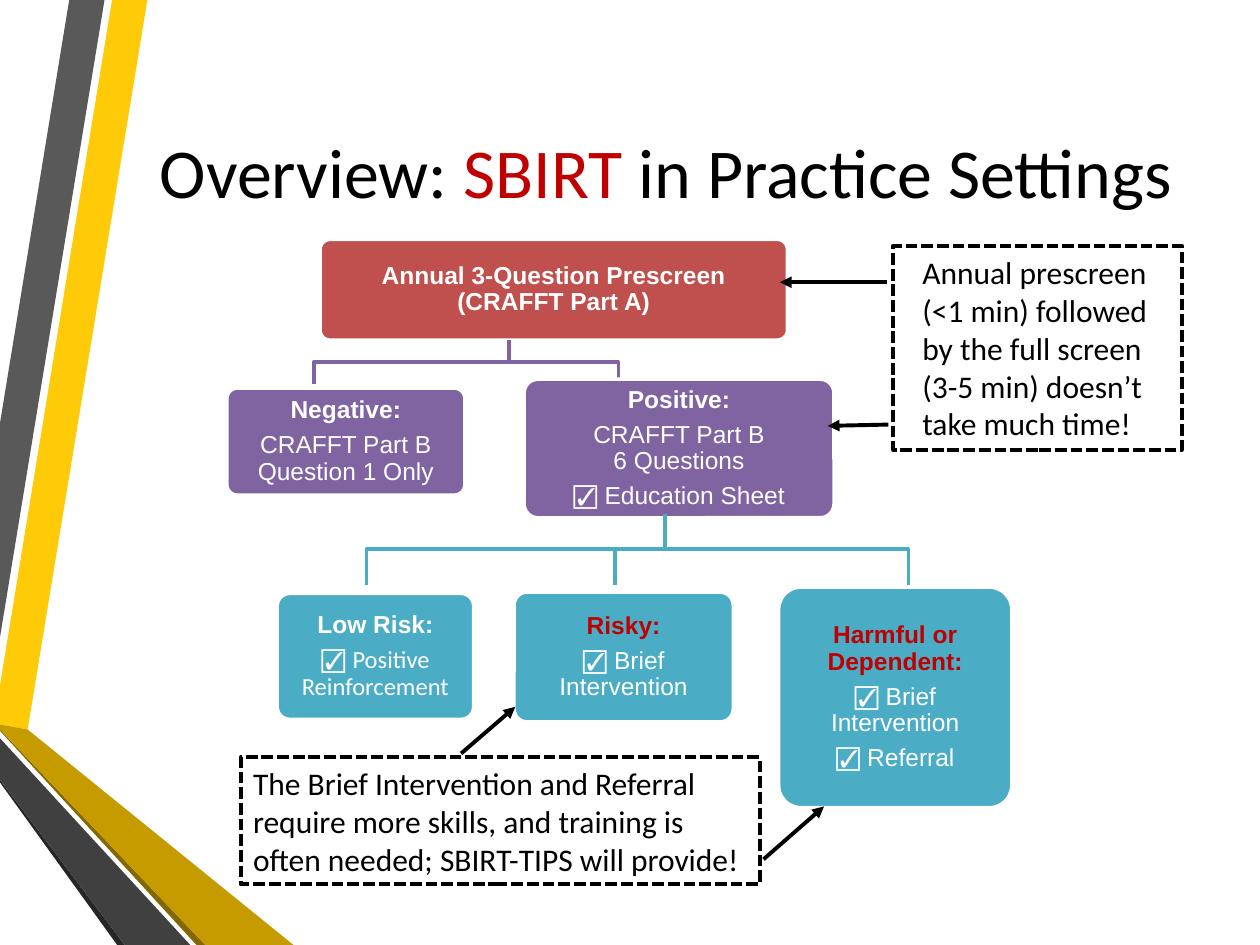
from pptx import Presentation
from pptx.dml.color import RGBColor
from pptx.enum.dml import MSO_LINE
from pptx.enum.shapes import MSO_CONNECTOR, MSO_SHAPE
from pptx.enum.text import MSO_ANCHOR, PP_ALIGN
from pptx.oxml.ns import qn
from pptx.util import Inches, Pt
from lxml import etree

RECTANGLE, ROUNDED = MSO_SHAPE.RECTANGLE, MSO_SHAPE.ROUNDED_RECTANGLE
STRAIGHT = MSO_CONNECTOR.STRAIGHT
DASH = MSO_LINE.SQUARE_DOT
MIDDLE = MSO_ANCHOR.MIDDLE
LEFT, CENTER = PP_ALIGN.LEFT, PP_ALIGN.CENTER

BLACK, WHITE, DARK_RED = "000000", "FFFFFF", "C00000"
RED, PURPLE, TEAL = "C0504D", "8064A2", "4BACC6"

RIBBONS = [
    ("FFCA08", [(0, 5.44), (0, 5.75), (0.22, 5.79), (1.17, 0), (0.89, 0)]),
    ("595959", [(0.83, 0), (0.55, 0), (0, 3.36), (0, 5.06)]),
    ("262626", [(0, 6.19), (0, 6.21), (0.93, 7.5), (0.99, 7.5)]),
    ("846700", [(0, 5.79), (0, 5.8), (1.56, 7.5), (1.63, 7.5)]),
    ("C59B00", [(0, 5.79), (1.63, 7.5), (2.33, 7.5), (0.22, 5.79), (0, 5.75)]),
    ("404040", [(0, 6.19), (0.99, 7.5), (1.51, 7.5), (0, 5.86)]),
]

# Each tier: elbow colour, elbows (start, end), boxes (place, inset, heading,
# heading colour, body paragraphs made of (text, font) runs).
PRESCREEN = (RED, [], [
    ((2.54, 1.9, 3.71, 0.8), 0.08,
     "Annual 3-Question Prescreen\n(CRAFFT Part A)", WHITE, []),
])
PART_B = (PURPLE, [((4.04, 2.7), (2.49, 3.05)), ((4.04, 2.7), (4.91, 3.05))], [
    ((1.8, 3.08, 1.89, 0.85), 0.08, "Negative:", WHITE,
     [[("CRAFFT Part B Question 1 Only", "Arial")]]),
    ((4.16, 3.01, 2.46, 1.1), 0.09, "Positive:", WHITE,
     [[("CRAFFT Part B\n6 Questions", "Arial")],
      [("☑ Education Sheet", "Arial")]]),
])
RISK_LEVELS = (TEAL, [((5.28, 4.08), (x, 4.64)) for x in (2.91, 4.88, 7.21)], [
    ((2.2, 4.71, 1.56, 1), 0.09, "Low Risk:", WHITE,
     [[("☑ ", "Arial"), ("Positive Reinforcement", "Calibri")]]),
    ((4.08, 4.7, 1.74, 1.03), 0.09, "Risky:", DARK_RED,
     [[("☑ Brief Intervention", "Arial")]]),
    ((6.18, 4.66, 1.85, 1.75), 0.11, "Harmful or Dependent:", DARK_RED,
     [[("☑ Brief Intervention", "Arial")], [("☑ Referral", "Arial")]]),
])

NOTES = [
    ((7.09, 1.95, 2.29, 1.62), 0.13,
     "Annual prescreen\n(<1 min) followed\nby the full screen\n"
     "(3-5 min) doesn’t take much time!",
     [((7.04, 2.24), (6.19, 2.24)), ((7.05, 3.37), (6.57, 3.38))]),
    ((1.91, 6.01, 4.12, 1.01), 0,
     "The Brief Intervention and Referral require more skills, "
     "and training is often needed; SBIRT-TIPS will provide!",
     [((3.66, 5.98), (4.09, 5.61)), ((6.06, 6.82), (6.54, 6.4))]),
]


def color(value):
    return RGBColor.from_string(value)


def paint(shape, fill=None, line=None, width=2):
    shape.shadow.inherit = False
    if fill:
        shape.fill.solid()
        shape.fill.fore_color.rgb = color(fill)
    else:
        shape.fill.background()
    if line:
        shape.line.color.rgb = color(line)
        shape.line.width = Pt(width)
    else:
        shape.line.fill.background()


def add_text(para, text, font, size, ink, bold=False):
    """Add one run per line, with line breaks between."""
    for number, line in enumerate(text.split("\n")):
        if number:
            para.add_line_break()
        span = para.add_run()
        span.text = line
        span.font.name, span.font.size, span.font.bold = font, Pt(size), bold
        span.font.color.rgb = color(ink)


def add_path(page, points, closed):
    points = [(Inches(x), Inches(y)) for x, y in points]
    builder = page.shapes.build_freeform(*points[0], scale=1.0)
    builder.add_line_segments(points[1:], close=closed)
    return builder.convert_to_shape()


def add_box(page, kind, place):
    return page.shapes.add_shape(kind, *map(Inches, place))


def add_ribbons(page):
    for fill, points in RIBBONS:
        paint(add_path(page, points, True), fill)


def add_title(page, place):
    title = page.shapes.title
    title.left, title.top, title.width, title.height = map(Inches, place)
    title.text_frame.vertical_anchor = MIDDLE
    para = title.text_frame.paragraphs[0]
    para.alignment = CENTER
    for text, ink in (("Overview: ", BLACK), ("SBIRT ", DARK_RED),
                      ("in Practice Settings", BLACK)):
        add_text(para, text, "Calibri", 40, ink)


def add_step(page, place, fill, inset, heading, heading_color, body):
    box = add_box(page, ROUNDED, place)
    box.adjustments[0] = 0.1
    paint(box, fill, WHITE)
    frame = box.text_frame
    frame.word_wrap = True
    frame.vertical_anchor = MIDDLE
    frame.margin_left = frame.margin_right = Inches(inset)
    frame.margin_top = frame.margin_bottom = Inches(inset)
    add_text(frame.paragraphs[0], heading, "Arial", 14, heading_color, True)
    for spans in body:
        para = frame.add_paragraph()
        for text, font in spans:
            add_text(para, text, font, 14, WHITE)
    for para in frame.paragraphs:
        para.alignment = CENTER
        para.line_spacing = 0.9
        para.space_after = Pt(4.9)


def add_tier(page, fill, elbows, steps):
    for (x1, y1), (x2, y2) in elbows:
        middle = (y1 + y2) / 2
        points = [(x1, y1), (x1, middle), (x2, middle), (x2, y2)]
        paint(add_path(page, points, False), line=fill)
    for place, *content in steps:
        add_step(page, place, fill, *content)


def add_arrow(page, start, end):
    arrow = page.shapes.add_connector(STRAIGHT, *map(Inches, start + end))
    arrow.line.color.rgb = color(BLACK)
    arrow.line.width = Pt(2.25)
    etree.SubElement(arrow.line._get_or_add_ln(), qn("a:tailEnd"), type="triangle")
    etree.SubElement(arrow._element.spPr, qn("a:effectLst"))


def add_note(page, place, indent, text, arrows):
    box = add_box(page, RECTANGLE, place)
    paint(box, line=BLACK, width=2.25)
    box.line.dash_style = DASH
    frame = box.text_frame
    frame.word_wrap = True
    frame.vertical_anchor = MIDDLE
    frame.margin_left = Inches(0.1 + indent)
    para = frame.paragraphs[0]
    para.alignment = LEFT
    add_text(para, text, "Calibri", 18, BLACK)
    for start, end in arrows:
        add_arrow(page, start, end)


def main():
    deck = Presentation()
    deck.slide_width, deck.slide_height = Inches(10), Inches(7.5)
    page = deck.slides.add_slide(deck.slide_layouts[5])
    add_ribbons(page)
    add_title(page, (1.07, 0.5, 8.43, 1.7))
    for tier in (PRESCREEN, PART_B, RISK_LEVELS):
        add_tier(page, *tier)
    for note in NOTES:
        add_note(page, *note)
    deck.save("out.pptx")


if __name__ == "__main__":
    main()
